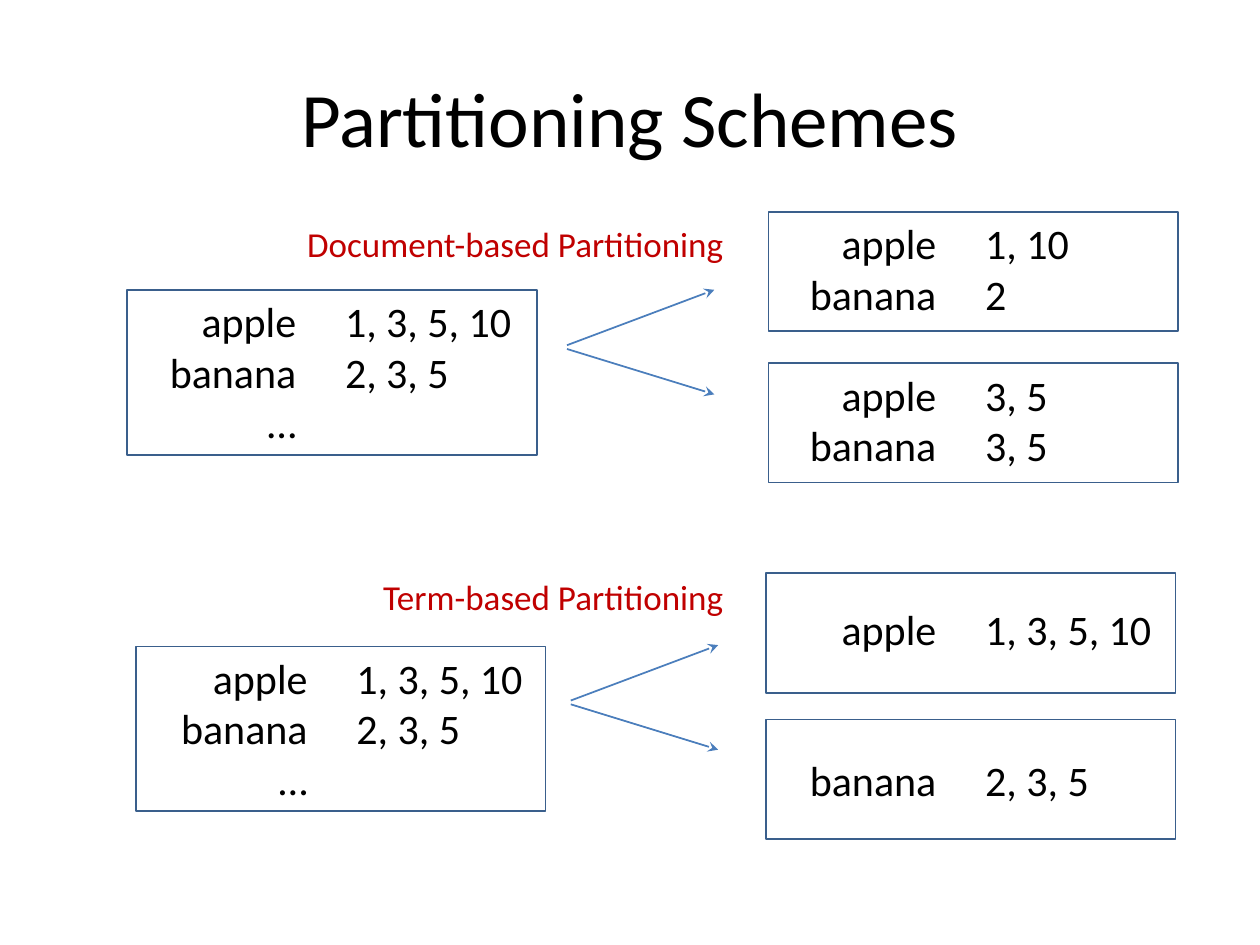
from lxml.etree import SubElement
from pptx import Presentation
from pptx.dml.color import RGBColor
from pptx.enum.shapes import MSO_CONNECTOR, MSO_SHAPE
from pptx.enum.text import MSO_ANCHOR, PP_ALIGN
from pptx.oxml.ns import qn
from pptx.util import Inches, Pt

COLORS = {"text": "000000", "label": "C00000", "arrow": "4B7EBC", "box": "3A5F8C"}
FONT = "Calibri"
COLUMN_WIDTH = 1.53
COLUMN_STEP = 1.72
BOX_WIDTH = 3.25
INDEX_HEIGHT = 1.31
PART_HEIGHT = 0.95


def rgb(name):
    return RGBColor.from_string(COLORS[name])


def add_text(s, lines, left, top, width, height, size=24, color="text",
             align=PP_ALIGN.LEFT, anchor=MSO_ANCHOR.TOP):
    tf = s.shapes.add_textbox(Inches(left), Inches(top), Inches(width), Inches(height)).text_frame
    tf.word_wrap = True
    tf.vertical_anchor = anchor
    for i, line in enumerate(lines):
        p = tf.add_paragraph() if i else tf.paragraphs[0]
        p.alignment = align
        r = p.add_run()
        r.text = line
        r.font.size = Pt(size)
        r.font.name = FONT
        r.font.color.rgb = rgb(color)


def add_box(s, left, top, height):
    sp = s.shapes.add_shape(MSO_SHAPE.RECTANGLE, Inches(left), Inches(top),
                            Inches(BOX_WIDTH), Inches(height))
    sp.shadow.inherit = False
    sp.fill.background()
    sp.line.color.rgb = rgb("box")
    sp.line.width = Pt(1)


def add_arrow(s, x1, y1, x2, y2):
    line = s.shapes.add_connector(MSO_CONNECTOR.STRAIGHT, Inches(x1), Inches(y1),
                                  Inches(x2), Inches(y2))
    line.line.color.rgb = rgb("arrow")
    line.line.width = Pt(1)
    SubElement(line.line._get_or_add_ln(), qn("a:tailEnd"), type="stealth")
    SubElement(line._element.spPr, qn("a:effectLst"))


def add_postings(s, terms, postings, left, top):
    """Right-aligned terms beside their left-aligned posting lists."""
    height = 0.1 + 0.4 * len(terms)
    add_text(s, terms, left, top, COLUMN_WIDTH, height, align=PP_ALIGN.RIGHT)
    add_text(s, postings, left + COLUMN_STEP, top, COLUMN_WIDTH, height)


def add_index(s, box_left, text_left, top):
    """The whole index before it is partitioned."""
    add_box(s, box_left, top, INDEX_HEIGHT)
    add_postings(s, ["apple", "banana", "…"], ["1, 3, 5, 10", "2, 3, 5"], text_left, top)


def add_part(s, terms, postings, box_left, box_top, text_top):
    add_box(s, box_left, box_top, PART_HEIGHT)
    add_postings(s, terms, postings, 6, text_top)


def add_split(s, left, top):
    """Two arrows that fan out from the index to its parts."""
    add_arrow(s, left, top + 0.44, left + 1.17, top)
    add_arrow(s, left, top + 0.47, left + 1.17, top + 0.83)


def add_label(s, text, top):
    add_text(s, [text], 1.42, top, 4.42, 0.44, size=20, color="label", align=PP_ALIGN.RIGHT)


def main():
    prs = Presentation()
    prs.slide_width, prs.slide_height = Inches(10), Inches(7.5)
    s = prs.slides.add_slide(prs.slide_layouts[6])

    add_text(s, ["Partitioning Schemes"], 0.5, 0.3, 9, 1.25, size=44,
             align=PP_ALIGN.CENTER, anchor=MSO_ANCHOR.MIDDLE)

    add_label(s, "Document-based Partitioning", 1.72)
    add_index(s, 1.01, 0.92, 2.3)
    add_split(s, 4.5, 2.3)
    both = ["apple", "banana"]
    add_part(s, both, ["1, 10", "2"], 6.1, 1.68, 1.68)
    add_part(s, both, ["3, 5", "3, 5"], 6.1, 2.88, 2.88)

    add_label(s, "Term-based Partitioning", 4.52)
    add_index(s, 1.08, 1.01, 5.13)
    add_split(s, 4.53, 5.12)
    add_part(s, ["apple"], ["1, 3, 5, 10"], 6.08, 4.55, 4.74)
    add_part(s, ["banana"], ["2, 3, 5"], 6.08, 5.71, 5.94)

    prs.save("out.pptx")


if __name__ == "__main__":
    main()
